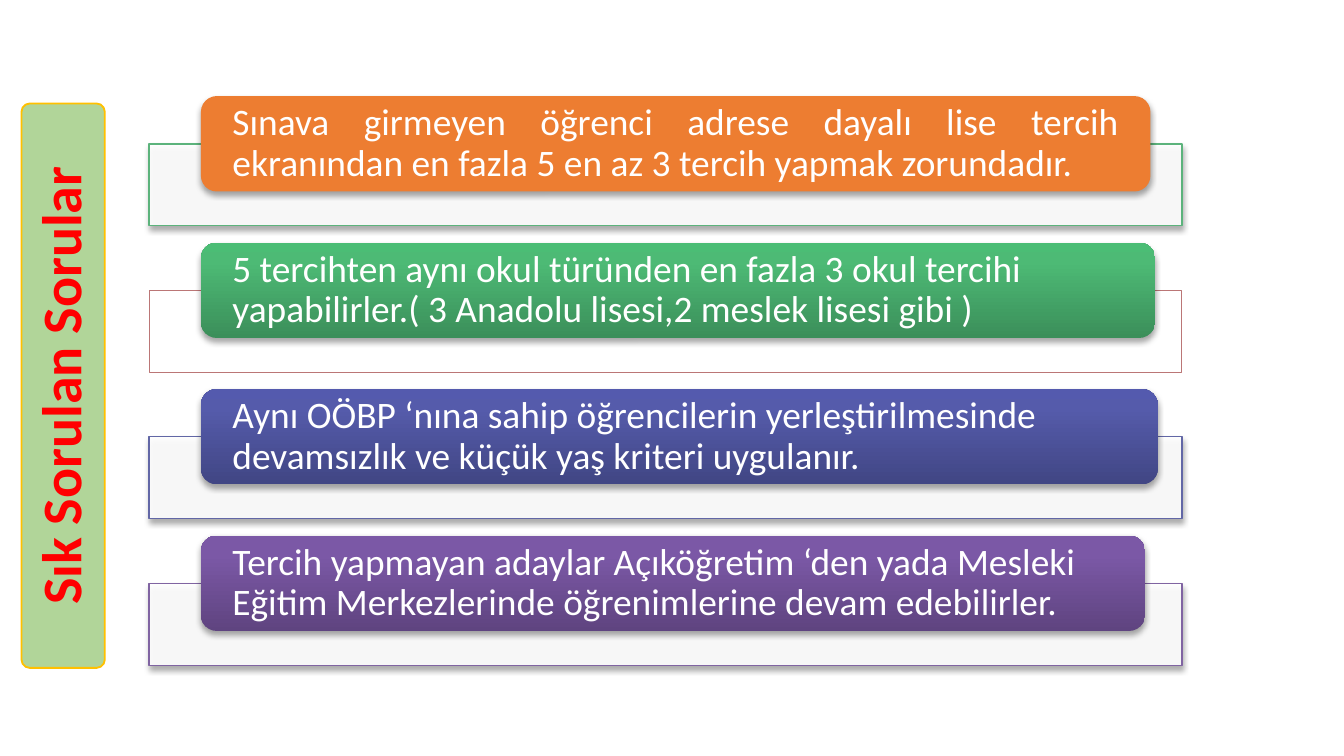
from copy import deepcopy
from dataclasses import dataclass

from lxml import etree
from pptx import Presentation
from pptx import util as u
from pptx.dml import color as c
from pptx.enum import shapes, text
from pptx.oxml import ns

PX = 4572
PITCH = 218
FONT = "Calibri"


@dataclass
class Answer:
    body: str
    width: int
    fill: tuple[str, ...]
    outline: str
    line_width: float = 0.75
    panel_shadow: bool = True
    align: text.PP_ALIGN = text.PP_ALIGN.LEFT


ANSWERS = [
    Answer("Sınava girmeyen öğrenci adrese dayalı lise tercih ekranından en fazla 5 en az 3 "
           "tercih yapmak zorundadır.",
           1413, ("ED7D31",), "5CB37C", align=text.PP_ALIGN.JUSTIFY),
    Answer("5 tercihten aynı okul türünden en fazla 3 okul tercihi yapabilirler."
           "( 3 Anadolu lisesi,2 meslek lisesi gibi )",
           1420, ("3B8F5A", "4DBA75", "4BBD75"), "BB7676", 0.5, False),
    Answer("Aynı OÖBP ‘nına sahip öğrencilerin yerleştirilmesinde devamsızlık ve küçük yaş "
           "kriteri uygulanır.",
           1424, ("414684", "555BAB", "545AAE"), "6267A6"),
    Answer("Tercih yapmayan adaylar Açıköğretim ‘den yada Mesleki Eğitim Merkezlerinde "
           "öğrenimlerine devam edebilirler.",
           1405, ("5F4480", "7B58A6", "7C57A8"), "8064A2"),
]


def px(n: int) -> u.Emu:
    return u.Emu(n * PX)


def rgb(value: str) -> c.RGBColor:
    return c.RGBColor.from_string(value)


def set_alpha(color, percent: int) -> None:
    etree.SubElement(color, ns.qn("a:alpha"), val=str(percent * 1000))


def add_shadow(sp) -> None:
    effects = sp._element.spPr.find(ns.qn("a:effectLst"))
    shadow = etree.SubElement(effects, ns.qn("a:outerShdw"), blurRad="40000",
                              dist="23000", dir="5400000", rotWithShape="0")
    set_alpha(etree.SubElement(shadow, ns.qn("a:srgbClr"), val="000000"), 35)


def fill_shape(sp, colors: tuple[str, ...], opacity: int) -> None:
    if len(colors) == 1:
        sp.fill.solid()
        sp.fill.fore_color.rgb = rgb(colors[0])
        if opacity < 100:
            set_alpha(sp._element.spPr.find(".//" + ns.qn("a:srgbClr")), opacity)
        return
    sp.fill.gradient()
    sp.fill.gradient_angle = 90
    stops = sp._element.spPr.find(".//" + ns.qn("a:gsLst"))
    stops.append(deepcopy(stops[-1]))
    for stop, color, position in zip(sp.fill.gradient_stops, colors, (0, 0.8, 1)):
        stop.color.rgb = rgb(color)
        stop.position = position


def add_box(slide, kind, left: int, top: int, width: int, height: int,
            colors: tuple[str, ...], opacity: int = 100,
            outline: str = "", line_width: float = 0, shadow: bool = False):
    sp = slide.shapes.add_shape(kind, px(left), px(top), px(width), px(height))
    sp.shadow.inherit = False
    fill_shape(sp, colors, opacity)
    if outline:
        sp.line.color.rgb = rgb(outline)
        sp.line.width = u.Pt(line_width)
    else:
        sp.line.fill.background()
    if shadow:
        add_shadow(sp)
    return sp


def write(sp, body: str, size: int, color: str, align: text.PP_ALIGN, side: int,
          bold: bool = False) -> None:
    tf = sp.text_frame
    tf.word_wrap = True
    tf.vertical_anchor = text.MSO_ANCHOR.MIDDLE
    tf.margin_left = tf.margin_right = px(side)
    tf.margin_top = tf.margin_bottom = 0
    p = tf.paragraphs[0]
    p.text = body
    p.alignment = align
    p.line_spacing = 0.9
    p.font.name = FONT
    p.font.size = u.Pt(size)
    p.font.bold = bold
    p.font.color.rgb = rgb(color)


def add_answer(slide, answer: Answer, row: int) -> None:
    offset = row * PITCH
    add_box(slide, shapes.MSO_SHAPE.RECTANGLE, 222, 214 + offset, 1537, 122, ("FFFFFF",), 90,
            answer.outline, answer.line_width, answer.panel_shadow)
    card = add_box(slide, shapes.MSO_SHAPE.ROUNDED_RECTANGLE, 299, 143 + offset,
                   answer.width, 142, answer.fill, shadow=True)
    write(card, answer.body, 20, "FFFFFF", answer.align, 40)


def add_banner(slide) -> None:
    banner = add_box(slide, shapes.MSO_SHAPE.ROUNDED_RECTANGLE, 32, 154, 124, 840,
                     ("A9D18E",), 90, "FFC000", 1)
    banner.adjustments[0] = 0.1
    write(banner, "Sık Sorulan Sorular", 30, "FF0000", text.PP_ALIGN.CENTER, 0, True)
    banner.text_frame._txBody.bodyPr.set("vert", "vert270")


def main() -> None:
    prs = Presentation()
    prs.slide_width, prs.slide_height = px(2000), px(1125)
    slide = prs.slides.add_slide(prs.slide_layouts[6])
    for row, answer in enumerate(ANSWERS):
        add_answer(slide, answer, row)
    add_banner(slide)
    prs.save("out.pptx")


if __name__ == "__main__":
    main()
